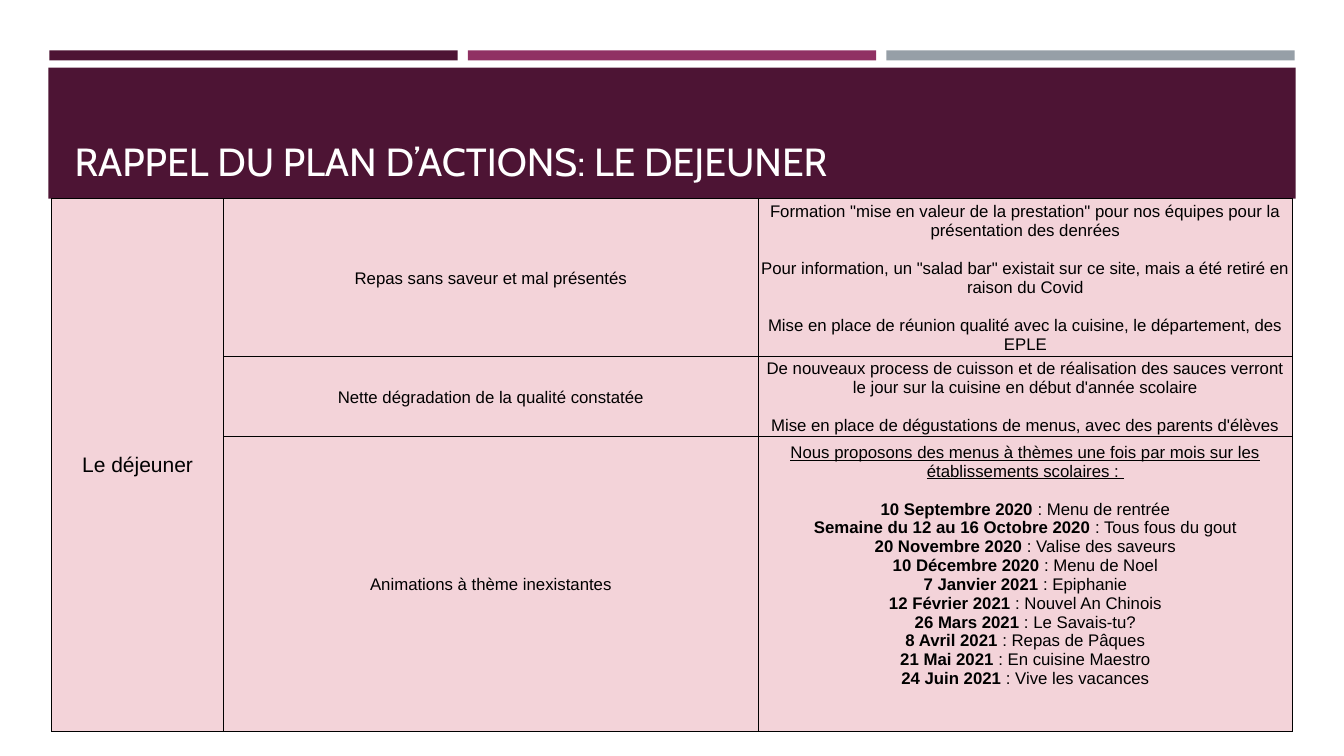
"""Build the lunch action plan slide."""
from dataclasses import dataclass

from lxml.etree import SubElement
from pptx import Presentation
from pptx.dml.color import RGBColor
from pptx.enum.shapes import MSO_SHAPE
from pptx.enum.text import MSO_ANCHOR, MSO_AUTO_SIZE, PP_ALIGN
from pptx.oxml.ns import qn
from pptx.slide import Slide
from pptx.table import _Cell
from pptx.util import Inches, Pt

PLUM = RGBColor(0x4D, 0x14, 0x34)
BERRY = RGBColor(0x90, 0x31, 0x63)
GREY = RGBColor(0x96, 0x9F, 0xA7)
PINK = RGBColor(0xF3, 0xD3, 0xD9)
WHITE = RGBColor(0xFF, 0xFF, 0xFF)
BLACK = RGBColor(0, 0, 0)


@dataclass(frozen=True)
class Bar:
    left: float
    top: float
    width: float
    height: float
    color: RGBColor


@dataclass(frozen=True)
class Piece:
    text: str
    bold: bool = False
    under: bool = False


@dataclass(frozen=True)
class Line:
    words: tuple[Piece, ...]
    gap: float = 0


@dataclass(frozen=True)
class Topic:
    issue: str
    lines: list[Line]
    height: float
    foot: float = 0


def plain(*texts: str) -> list[Line]:
    return [Line((Piece(text),), 13.8 if i else 0) for i, text in enumerate(texts)]


BARS = [Bar(0.49 + 4.15 * i, 0.5, 4.05, 0.1, color)
        for i, color in enumerate((PLUM, BERRY, GREY))]
BARS.append(Bar(0.48, 0.67, 12.37, 1.3, PLUM))

MENUS = [
    ("10 Septembre 2020", "Menu de rentrée"),
    ("Semaine du 12 au 16 Octobre 2020", "Tous fous du gout"),
    ("20 Novembre 2020", "Valise des saveurs"),
    ("10 Décembre 2020", "Menu de Noel"),
    ("7 Janvier 2021", "Epiphanie"),
    ("12 Février 2021", "Nouvel An Chinois"),
    ("26 Mars 2021", "Le Savais-tu?"),
    ("8 Avril 2021", "Repas de Pâques"),
    ("21 Mai 2021", "En cuisine Maestro"),
    ("24 Juin 2021", "Vive les vacances"),
]
INTRO = Line((Piece("Nous proposons des menus à thèmes une fois par mois sur les "
                    "établissements scolaires : ", under=True),))
DATES = [Line((Piece(day, bold=True), Piece(f" : {menu}")), 0 if i else 13.8)
         for i, (day, menu) in enumerate(MENUS)]

TOPICS = [
    Topic("Repas sans saveur et mal présentés", plain(
        'Formation "mise en valeur de la prestation" pour nos équipes pour la '
        "présentation des denrées",
        'Pour information, un "salad bar" existait sur ce site, mais a été retiré '
        "en raison du Covid",
        "Mise en place de réunion qualité avec la cuisine, le département, des EPLE",
    ), 1.57),
    Topic("Nette dégradation de la qualité constatée", plain(
        "De nouveaux process de cuisson et de réalisation des sauces verront le jour "
        "sur la cuisine en début d'année scolaire",
        "Mise en place de dégustations de menus, avec des parents d'élèves",
    ), 0.79),
    Topic("Animations à thème inexistantes", [INTRO, *DATES], 2.93, 0.38),
]
WIDTHS = (1.71, 5.3, 5.3)


def draw_bar(slide: Slide, bar: Bar) -> None:
    shape = slide.shapes.add_shape(
        MSO_SHAPE.RECTANGLE, Inches(bar.left), Inches(bar.top),
        Inches(bar.width), Inches(bar.height))
    shape.shadow.inherit = False
    shape.fill.solid()
    shape.fill.fore_color.rgb = bar.color
    shape.line.fill.background()
    slide.shapes.title.element.addprevious(shape.element)


def draw_title(slide: Slide, text: str) -> None:
    title = slide.shapes.title
    title.left, title.top = Inches(0.64), Inches(0.77)
    title.width, title.height = Inches(12.06), Inches(1.11)
    frame = title.text_frame
    frame.word_wrap = True
    frame.auto_size = MSO_AUTO_SIZE.NONE
    frame.vertical_anchor = MSO_ANCHOR.BOTTOM
    para = frame.paragraphs[0]
    para.alignment = PP_ALIGN.LEFT
    run = para.add_run()
    run.text = text
    run.font.name, run.font.size = "Cabin", Pt(28)
    run.font.color.rgb = WHITE


def style_cell(cell: _Cell) -> None:
    cell.vertical_anchor = MSO_ANCHOR.MIDDLE
    cell.margin_left = cell.margin_right = cell.margin_top = Inches(0.01)
    cell.margin_bottom = 0
    props = cell._tc.get_or_add_tcPr()
    for side in ("lnL", "lnR", "lnT", "lnB"):
        edge = SubElement(props, qn(f"a:{side}"), w=str(Pt(0.5)))
        fill = SubElement(edge, qn("a:solidFill"))
        SubElement(fill, qn("a:srgbClr"), val=str(BLACK))
    cell.fill.solid()
    cell.fill.fore_color.rgb = PINK


def write_cell(cell: _Cell, lines: list[Line], size: float = 12) -> None:
    frame = cell.text_frame
    for i, line in enumerate(lines):
        para = frame.add_paragraph() if i else frame.paragraphs[0]
        para.alignment = PP_ALIGN.CENTER
        para.space_before = Pt(line.gap)
        for piece in line.words:
            run = para.add_run()
            run.text = piece.text
            font = run.font
            font.name, font.size = "Arial", Pt(size)
            font.bold, font.underline = piece.bold, piece.under
            font.color.rgb = BLACK


def draw_table(slide: Slide) -> None:
    total = sum(topic.height for topic in TOPICS)
    table = slide.shapes.add_table(
        len(TOPICS), len(WIDTHS), Inches(0.51), Inches(1.97),
        Inches(sum(WIDTHS)), Inches(total)).table
    table.first_row = table.horz_banding = False
    for column, width in zip(table.columns, WIDTHS):
        column.width = Inches(width)
    for cell in table.iter_cells():
        style_cell(cell)
    for i, topic in enumerate(TOPICS):
        table.rows[i].height = Inches(topic.height)
        write_cell(table.cell(i, 1), plain(topic.issue))
        write_cell(table.cell(i, 2), topic.lines)
        table.cell(i, 2).margin_bottom = Inches(topic.foot)
    meal = table.cell(0, 0)
    meal.merge(table.cell(len(TOPICS) - 1, 0))
    write_cell(meal, plain("Le déjeuner"), 15)


def main() -> None:
    deck = Presentation()
    deck.slide_width, deck.slide_height = Inches(13.33), Inches(7.5)
    slide = deck.slides.add_slide(deck.slide_layouts[5])
    for bar in BARS:
        draw_bar(slide, bar)
    draw_title(slide, "RAPPEL DU PLAN D’ACTIONS: LE DEJEUNER")
    draw_table(slide)
    deck.save("out.pptx")


if __name__ == "__main__":
    main()
